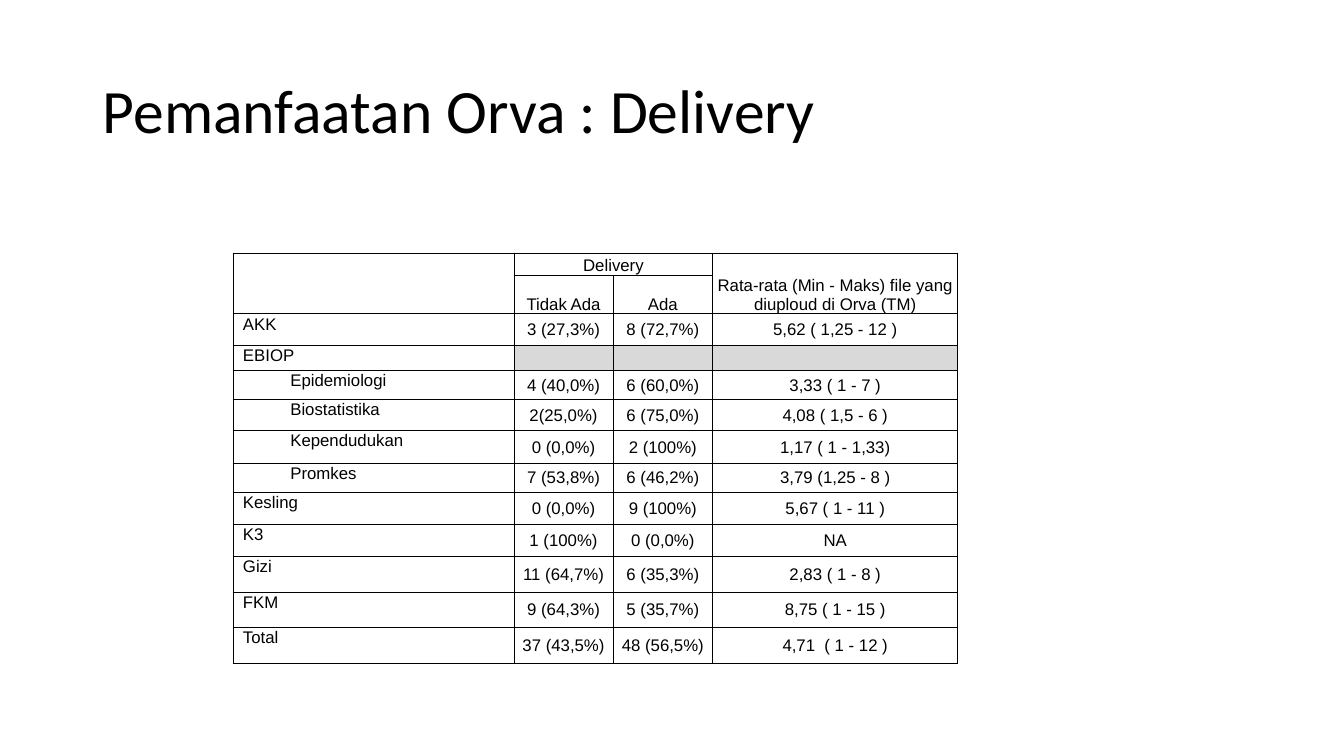
from lxml.etree import SubElement
from pptx import Presentation
from pptx.dml.color import RGBColor
from pptx.enum.text import MSO_ANCHOR, PP_ALIGN
from pptx.oxml.ns import qn
from pptx.util import Inches, Pt

COLUMNS = [2.79, 0.98, 0.99, 2.43]
HEIGHTS = [0.22, 0.22, 0.31, 0.25, 0.29, 0.31, 0.32, 0.29, 0.32, 0.32, 0.35, 0.35, 0.36]
HEADERS = [
    ("", "Delivery", "", "Rata-rata (Min - Maks) file yang diuploud di Orva (TM)"),
    ("", "Tidak Ada", "Ada", ""),
]
UNITS = [
    ("AKK", "3 (27,3%)", "8 (72,7%)", "5,62 ( 1,25 - 12 )"),
    ("EBIOP", "", "", ""),
    ("Epidemiologi", "4 (40,0%)", "6 (60,0%)", "3,33 ( 1 - 7 )"),
    ("Biostatistika", "2(25,0%)", "6 (75,0%)", "4,08 ( 1,5 - 6 )"),
    ("Kependudukan", "0 (0,0%)", "2 (100%)", "1,17 ( 1 - 1,33)"),
    ("Promkes", "7 (53,8%)", "6 (46,2%)", "3,79 (1,25 - 8 )"),
    ("Kesling", "0 (0,0%)", "9 (100%)", "5,67 ( 1 - 11 )"),
    ("K3", "1 (100%)", "0 (0,0%)", "NA"),
    ("Gizi", "11 (64,7%)", "6 (35,3%)", "2,83 ( 1 - 8 )"),
    ("FKM", "9 (64,3%)", "5 (35,7%)", "8,75 ( 1 - 15 )"),
    ("Total", "37 (43,5%)", "48 (56,5%)", "4,71  ( 1 - 12 )"),
]
EBIOP_PROGRAMS = {"Epidemiologi", "Biostatistika", "Kependudukan", "Promkes"}
MERGES = [((0, 0), (1, 0)), ((0, 1), (0, 2)), ((0, 3), (1, 3))]


def color(value):
    return RGBColor.from_string(value)


class SlideBuilder:
    ink = "000000"
    shade = "D9D9D9"
    title_font = "Calibri"
    table_font = "Arial"

    def __init__(self, prs):
        self.s = prs.slides.add_slide(prs.slide_layouts[5])

    def style(self, p, font, size, align):
        p.alignment = align
        p.font.name = font
        p.font.size = Pt(size)
        p.font.bold = False
        p.font.color.rgb = color(self.ink)

    def title(self, text, left, top, width, height):
        sp = self.s.shapes.title
        sp.left, sp.top = Inches(left), Inches(top)
        sp.width, sp.height = Inches(width), Inches(height)
        tf = sp.text_frame
        tf.text = text
        tf.vertical_anchor = MSO_ANCHOR.MIDDLE
        p = tf.paragraphs[0]
        p.line_spacing = 0.9
        self.style(p, self.title_font, 44, PP_ALIGN.LEFT)

    def borders(self, cell):
        tc_pr = cell._tc.get_or_add_tcPr()
        for side in ("a:lnL", "a:lnR", "a:lnT", "a:lnB"):
            line = SubElement(tc_pr, qn(side), w=str(Pt(0.5)))
            fill = SubElement(line, qn("a:solidFill"))
            SubElement(fill, qn("a:srgbClr"), val=self.ink)

    def cell(self, cell, text, anchor, align, indent, shaded):
        cell.text = text
        cell.vertical_anchor = anchor
        cell.margin_left = Inches(indent)
        cell.margin_right = cell.margin_top = Inches(0.01)
        cell.margin_bottom = 0
        p = cell.text_frame.paragraphs[0]
        self.style(p, self.table_font, 12, align)
        if not text:
            SubElement(p._p, qn("a:endParaRPr"), sz="1200")
        self.borders(cell)
        if shaded:
            cell.fill.solid()
            cell.fill.fore_color.rgb = color(self.shade)
        else:
            cell.fill.background()

    def table(self, left, top):
        rows = HEADERS + UNITS
        table = self.s.shapes.add_table(
            len(rows), len(COLUMNS), Inches(left), Inches(top),
            Inches(sum(COLUMNS)), Inches(sum(HEIGHTS))).table
        table.first_row = table.horz_banding = False
        for column, width in zip(table.columns, COLUMNS):
            column.width = Inches(width)
        for row, height in zip(table.rows, HEIGHTS):
            row.height = Inches(height)
        for i, values in enumerate(rows):
            header = i < len(HEADERS)
            for j, text in enumerate(values):
                anchor, align, indent = MSO_ANCHOR.MIDDLE, PP_ALIGN.CENTER, 0.01
                if header:
                    anchor = MSO_ANCHOR.BOTTOM
                elif j == 0:
                    anchor, align = MSO_ANCHOR.TOP, PP_ALIGN.LEFT
                    indent = 0.57 if text in EBIOP_PROGRAMS else 0.1
                shaded = not header and not text
                self.cell(table.cell(i, j), text, anchor, align, indent, shaded)
        for start, end in MERGES:
            table.cell(*start).merge(table.cell(*end))


def main():
    prs = Presentation()
    prs.slide_width, prs.slide_height = Inches(13.33), Inches(7.5)
    slide = SlideBuilder(prs)
    slide.title("Pemanfaatan Orva : Delivery", 0.92, 0.4, 11.5, 1.45)
    slide.table(2.31, 2.51)
    prs.save("out.pptx")


if __name__ == "__main__":
    main()
